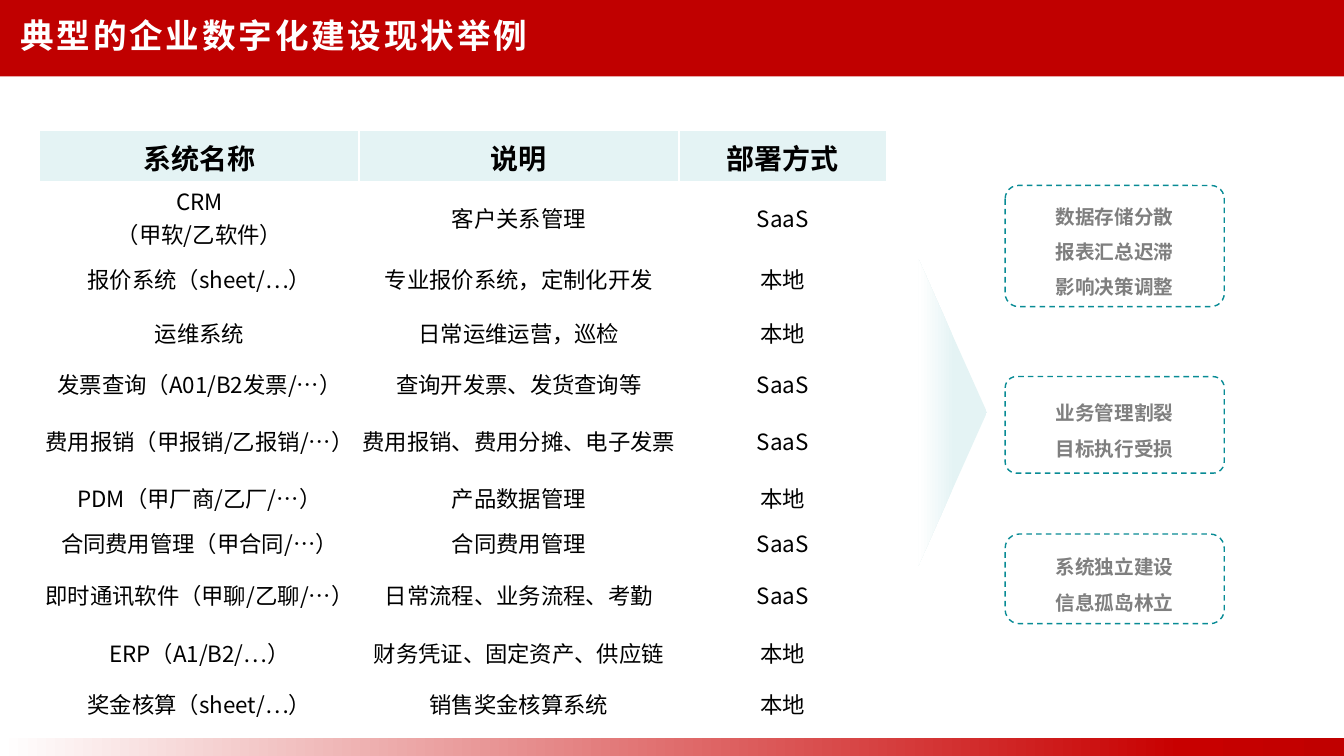
from copy import deepcopy

from lxml import etree
from pptx import Presentation
from pptx.dml.color import RGBColor
from pptx.enum.dml import MSO_LINE
from pptx.enum.shapes import MSO_SHAPE
from pptx.enum.text import MSO_ANCHOR, PP_ALIGN
from pptx.oxml.ns import qn
from pptx.util import Pt

RECT, ROUND = MSO_SHAPE.RECTANGLE, MSO_SHAPE.ROUNDED_RECTANGLE
PEAK = MSO_SHAPE.ISOSCELES_TRIANGLE
LEFT, MID = PP_ALIGN.LEFT, PP_ALIGN.CENTER
CENTRE = MSO_ANCHOR.MIDDLE
DASH = MSO_LINE.DASH
FONT = "Noto Sans CJK SC"
RED, MINT, TEAL, GREY, WHITE = "C00000", "E4F3F4", "088B95", "7F7F7F", "FFFFFF"
WIDE, HIGH = 960, 540

TITLE = "典型的企业数字化建设现状举例"
HEAD = ("系统名称", "说明", "部署方式")
CLOUD, LOCAL = "SaaS", "本地"
# system, use, hosting, row height
SYSTEMS = [
    ("CRM\n（甲软/乙软件）", "客户关系管理", CLOUD, 48.5),
    ("报价系统（sheet/…）", "专业报价系统，定制化开发", LOCAL, 39),
    ("运维系统", "日常运维运营，巡检", LOCAL, 38.5),
    ("发票查询（A01/B2发票/…）", "查询开发票、发货查询等", CLOUD, 34.5),
    ("费用报销（甲报销/乙报销/…）", "费用报销、费用分摊、电子发票", CLOUD, 46.5),
    ("PDM（甲厂商/乙厂/…）", "产品数据管理", LOCAL, 35.5),
    ("合同费用管理（甲合同/…）", "合同费用管理", CLOUD, 28),
    ("即时通讯软件（甲聊/乙聊/…）", "日常流程、业务流程、考勤", CLOUD, 46.5),
    ("ERP（A1/B2/…）", "财务凭证、固定资产、供应链", LOCAL, 36.5),
    ("奖金核算（sheet/…）", "销售奖金核算系统", LOCAL, 36.5),
]
COLS = (228, 228.5, 148.5)
# lines, top, height, corner
ISSUES = [
    ("数据存储分散\n报表汇总迟滞\n影响决策调整", 132.5, 86.5, 0.109),
    ("业务管理割裂\n目标执行受损", 269, 69, 0.117),
    ("系统独立建设\n信息孤岛林立", 381.5, 64, 0.157),
]


def rgb(code):
    return RGBColor.from_string(code)


def write(frame, text, size=16, color="000000", bold=False, align=MID,
          lead=None, gap=None):
    frame.word_wrap = True
    for i, line in enumerate(text.split("\n")):
        para = frame.add_paragraph() if i else frame.paragraphs[0]
        para.alignment = align
        if lead:
            para.line_spacing = lead
        run = para.add_run()
        run.text = line
        font = run.font
        font.size, font.bold, font.name = Pt(size), bold, FONT
        font.color.rgb = rgb(color)
        props = run._r.get_or_add_rPr()
        east = etree.SubElement(props, qn("a:ea"))
        east.set("typeface", FONT)
        if gap:
            props.set("spc", str(gap * 100))


def draw(kind, x, y, w, h, fill=None):
    shape = slide.shapes.add_shape(kind, Pt(x), Pt(y), Pt(w), Pt(h))
    shape.shadow.inherit = False
    shape.line.fill.background()
    if fill:
        shape.fill.solid()
        shape.fill.fore_color.rgb = rgb(fill)
    else:
        shape.fill.background()
    return shape


def blend(shape, angle, stops):
    """Fill with a linear gradient; the angle runs counter-clockwise."""
    fill = shape.fill
    fill.gradient()
    fill.gradient_angle = angle
    marks = shape._element.spPr.find(".//" + qn("a:gsLst"))
    while len(marks) < len(stops):
        marks.append(deepcopy(marks[-1]))
    for mark, (pos, color) in zip(fill.gradient_stops, stops):
        mark.position = pos
        mark.color.rgb = rgb(color)


def edge(cell, low):
    """White borders, with the given width at the bottom."""
    props = cell._tc.get_or_add_tcPr()
    for i, (side, width) in enumerate(
            [("lnL", 1), ("lnR", 1), ("lnT", 1), ("lnB", low)]):
        line = etree.Element(qn("a:" + side), w=str(Pt(width)))
        solid = etree.SubElement(line, qn("a:solidFill"))
        etree.SubElement(solid, qn("a:srgbClr"), val=WHITE)
        props.insert(i, line)


def fill_table():
    highs = [37.5] + [row[3] for row in SYSTEMS]
    grid = slide.shapes.add_table(len(highs), len(COLS), Pt(28.5), Pt(93.5),
                                  Pt(sum(COLS)), Pt(sum(highs))).table
    for col, width in zip(grid.columns, COLS):
        col.width = Pt(width)
    for r, row in enumerate([HEAD] + [row[:3] for row in SYSTEMS]):
        grid.rows[r].height = Pt(highs[r])
        top = r == 0
        for c, text in enumerate(row):
            cell = grid.cell(r, c)
            cell.margin_left = cell.margin_right = 0
            cell.margin_top = cell.margin_bottom = 0
            cell.vertical_anchor = CENTRE
            cell.fill.solid()
            cell.fill.fore_color.rgb = rgb(MINT if top else WHITE)
            edge(cell, 3 if top else 1)
            write(cell.text_frame, text, size=20 if top else 16, bold=top)


deck = Presentation()
deck.slide_width, deck.slide_height = Pt(WIDE), Pt(HIGH)
slide = deck.slides.add_slide(deck.slide_layouts[6])

draw(RECT, 0, 0, WIDE, 54.5, RED)
foot = draw(RECT, 0, 527, WIDE, 13)
blend(foot, 0, [(0, WHITE), (0.88, "C80000"), (1, RED)])

title = slide.shapes.add_textbox(Pt(7.5), Pt(3.5), Pt(731.5), Pt(43)).text_frame
title.vertical_anchor = CENTRE
write(title, TITLE, size=24, color=WHITE, bold=True, align=LEFT, gap=2)

fill_table()

for text, y, h, corner in ISSUES:
    box = draw(ROUND, 718, y, 156.5, h)
    box.adjustments[0] = corner
    box.line.color.rgb = rgb(TEAL)
    box.line.width = Pt(1)
    box.line.dash_style = DASH
    box.text_frame.vertical_anchor = CENTRE
    write(box.text_frame, text, size=14, color=GREY, bold=True, lead=1.5)

arrow = draw(PEAK, 571, 270, 219, 49)
arrow.rotation = 90
blend(arrow, 270, [(0.47, MINT), (1, WHITE)])

deck.save("out.pptx")
